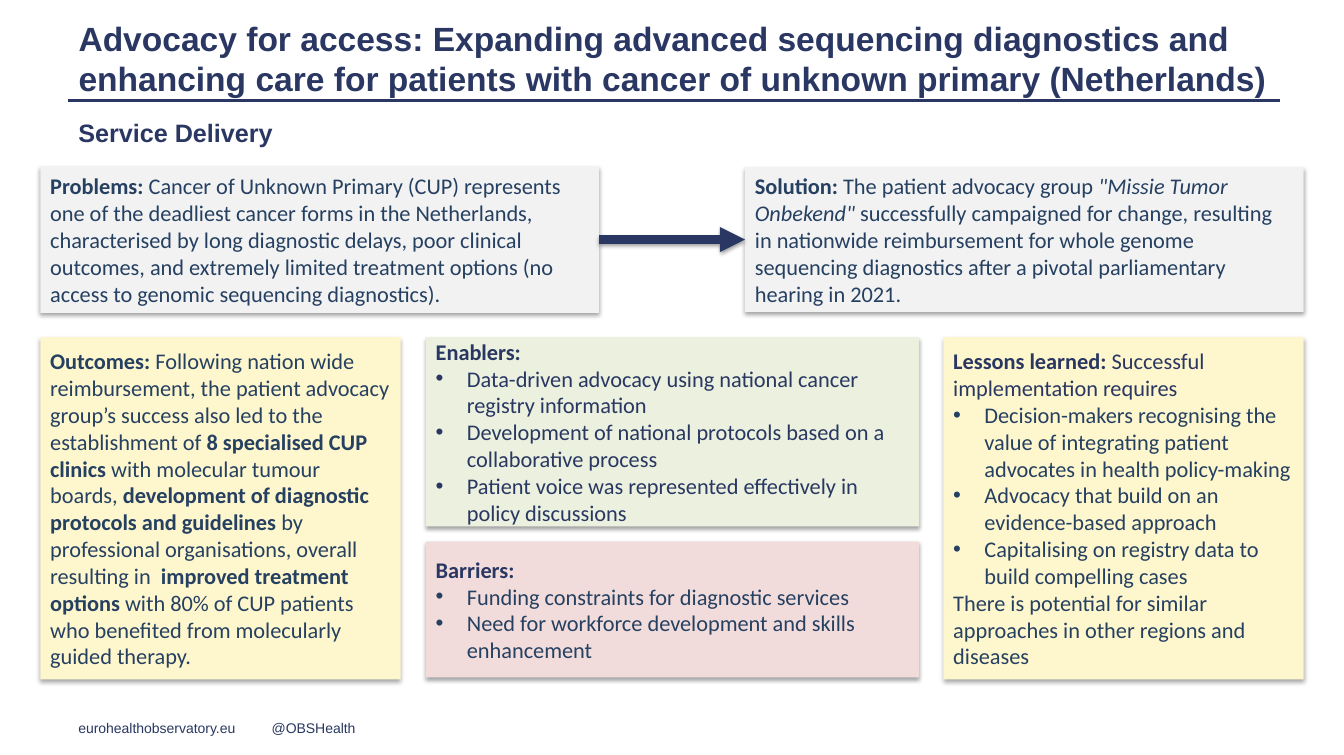
from dataclasses import dataclass

from pptx import Presentation
from pptx.dml.color import RGBColor
from pptx.enum.shapes import MSO_CONNECTOR, MSO_SHAPE
from pptx.enum.text import MSO_ANCHOR, MSO_AUTO_SIZE, PP_ALIGN
from pptx.oxml import parse_xml
from pptx.oxml.ns import nsdecls, qn
from pptx.util import Emu, Pt

EMU_PER_PX = 9144  # 100 px to the inch


@dataclass(frozen=True)
class Theme:
    navy: str = "293762"
    ink: str = "254061"
    grey: str = "F2F2F2"
    yellow: str = "FEF7CD"
    green: str = "EBF1DE"
    pink: str = "F2DCDB"
    head_font: str = "Arial"
    body_font: str = "Calibri"
    title: int = 24
    subtitle: int = 18
    body: int = 16
    footer: int = 10


T = Theme()


def px(n):
    return Emu(n * EMU_PER_PX)


def rgb(value):
    return RGBColor.from_string(value)


def add_text(p, text, *, size=T.body, font=T.body_font, color=T.ink, bold=False):
    """Fill a paragraph; *...* marks bold and _..._ marks italic."""
    p.alignment = PP_ALIGN.LEFT
    for i, chunk in enumerate(text.split("*")):
        for j, part in enumerate(chunk.split("_")):
            if not part:
                continue
            r = p.add_run()
            r.text = part
            f = r.font
            f.name, f.size = font, Pt(size)
            f.bold, f.italic = bold or i % 2 == 1, j % 2 == 1
            f.color.rgb = rgb(color)


def add_bullet(p):
    pPr = p._p.get_or_add_pPr()
    pPr.set("marL", str(px(31)))
    pPr.set("indent", str(-px(31)))
    pPr.append(parse_xml(f'<a:buFont {nsdecls("a")} typeface="Arial"/>'))
    pPr.append(parse_xml(f'<a:buChar {nsdecls("a")} char="•"/>'))


def add_shadow(spPr, alpha, dist):
    for old in spPr.findall(qn("a:effectLst")):
        spPr.remove(old)
    spPr.append(parse_xml(
        f'<a:effectLst {nsdecls("a")}>'
        f'<a:outerShdw blurRad="{Pt(3.1)}" dist="{Pt(dist)}" dir="5400000" rotWithShape="0">'
        f'<a:srgbClr val="000000"><a:alpha val="{alpha * 1000}"/></a:srgbClr>'
        '</a:outerShdw></a:effectLst>'))


def add_panel(slide, box, fill, paragraphs):
    """Shadowed card; each paragraph is (text, colour), and "• " opens a bullet."""
    sp = slide.shapes.add_shape(MSO_SHAPE.RECTANGLE, *map(px, box))
    sp.fill.solid()
    sp.fill.fore_color.rgb = rgb(fill)
    sp.line.fill.background()
    sp.shadow.inherit = False
    add_shadow(sp._element.spPr, 35, 1.8)
    tf = sp.text_frame
    tf.word_wrap = True
    tf.vertical_anchor = MSO_ANCHOR.MIDDLE
    for i, (text, color) in enumerate(paragraphs):
        p = tf.add_paragraph() if i else tf.paragraphs[0]
        if text.startswith("• "):
            add_bullet(p)
        add_text(p, text.removeprefix("• "), color=color)
    return sp


def add_label(slide, box, text, **fmt):
    tf = slide.shapes.add_textbox(*map(px, box)).text_frame
    tf.word_wrap = True
    add_text(tf.paragraphs[0], text, font=T.head_font, color=T.navy, **fmt)


def add_line(slide, start, end, width):
    line = slide.shapes.add_connector(MSO_CONNECTOR.STRAIGHT, *map(px, start + end))
    line.line.color.rgb = rgb(T.navy)
    line.line.width = Pt(width)
    line._element.spPr.append(parse_xml(f'<a:effectLst {nsdecls("a")}/>'))
    return line


def add_arrow(slide, source, target):
    y = 238
    arrow = add_line(slide, (595, y), (740, y), 6)
    arrow.begin_connect(source, 3)
    arrow.end_connect(target, 1)
    arrow.line._get_or_add_ln().append(
        parse_xml(f'<a:tailEnd {nsdecls("a")} type="triangle"/>'))
    add_shadow(arrow._element.spPr, 38, 1.6)


def set_title(slide, box, text):
    sp = slide.shapes.title
    sp.left, sp.top, sp.width, sp.height = map(px, box)
    tf = sp.text_frame
    tf.word_wrap = True
    tf.auto_size = MSO_AUTO_SIZE.NONE
    tf.vertical_anchor = MSO_ANCHOR.MIDDLE
    add_text(tf.paragraphs[0], text, size=T.title, font=T.head_font,
             color=T.navy, bold=True)


def main():
    prs = Presentation()
    prs.slide_width, prs.slide_height = px(1335), px(750)
    slide = prs.slides.add_slide(prs.slide_layouts[5])

    # Heading and footer
    set_title(slide, (68, 34, 1203, 47),
              "Advocacy for access: Expanding advanced sequencing diagnostics and "
              "enhancing care for patients with cancer of unknown primary (Netherlands)")
    add_line(slide, (68, 100), (1271, 100), 2)
    add_label(slide, (68, 112, 1203, 53), "Service Delivery", size=T.subtitle, bold=True)
    add_label(slide, (68, 710, 213, 27), "eurohealthobservatory.eu", size=T.footer)
    add_label(slide, (260, 710, 148, 27), "@OBSHealth", size=T.footer)

    # Problem leading to solution
    problems = add_panel(slide, (40, 165, 555, 146), T.grey, [
        ("*Problems: *Cancer of Unknown Primary (CUP) represents one of the deadliest "
         "cancer forms in the Netherlands, characterised by long diagnostic delays, poor "
         "clinical outcomes, and extremely limited treatment options (no access to "
         "genomic sequencing diagnostics).", T.ink)])
    solution = add_panel(slide, (740, 166, 555, 144), T.grey, [
        ('*Solution: *The patient advocacy group _"Missie Tumor Onbekend"_ successfully '
         "campaigned for change, resulting in nationwide reimbursement for whole genome "
         "sequencing diagnostics after a pivotal parliamentary hearing in 2021.", T.ink)])
    add_arrow(slide, problems, solution)

    # Results, conditions and lessons
    add_panel(slide, (40, 335, 358, 340), T.yellow, [
        ("*Outcomes: *Following nation wide reimbursement, the patient advocacy group’s "
         "success also led to the establishment of *8 specialised CUP clinics* with "
         "molecular tumour boards, *development of diagnostic protocols and guidelines* "
         "by professional organisations, overall resulting in  *improved treatment "
         "options *with 80% of CUP patients who benefited from molecularly guided "
         "therapy.", T.ink)])
    add_panel(slide, (423, 335, 490, 188), T.green, [
        ("*Enablers:*", T.navy),
        ("• Data-driven advocacy using national cancer registry information", T.navy),
        ("• Development of national protocols based on a collaborative process", T.navy),
        ("• Patient voice was represented effectively in policy discussions", T.navy)])
    add_panel(slide, (423, 538, 490, 135), T.pink, [
        ("*Barriers:*", T.navy),
        ("• Funding constraints for diagnostic services", T.ink),
        ("• Need for workforce development and skills enhancement", T.ink)])
    add_panel(slide, (937, 335, 358, 340), T.yellow, [
        ("*Lessons learned: *Successful implementation requires", T.navy),
        ("• Decision-makers recognising the value of integrating patient advocates in "
         "health policy-making", T.ink),
        ("• Advocacy that build on an evidence-based approach", T.ink),
        ("• Capitalising on registry data to build compelling cases", T.ink),
        ("There is potential for similar approaches in other regions and diseases", T.ink)])

    prs.save("out.pptx")


if __name__ == "__main__":
    main()
